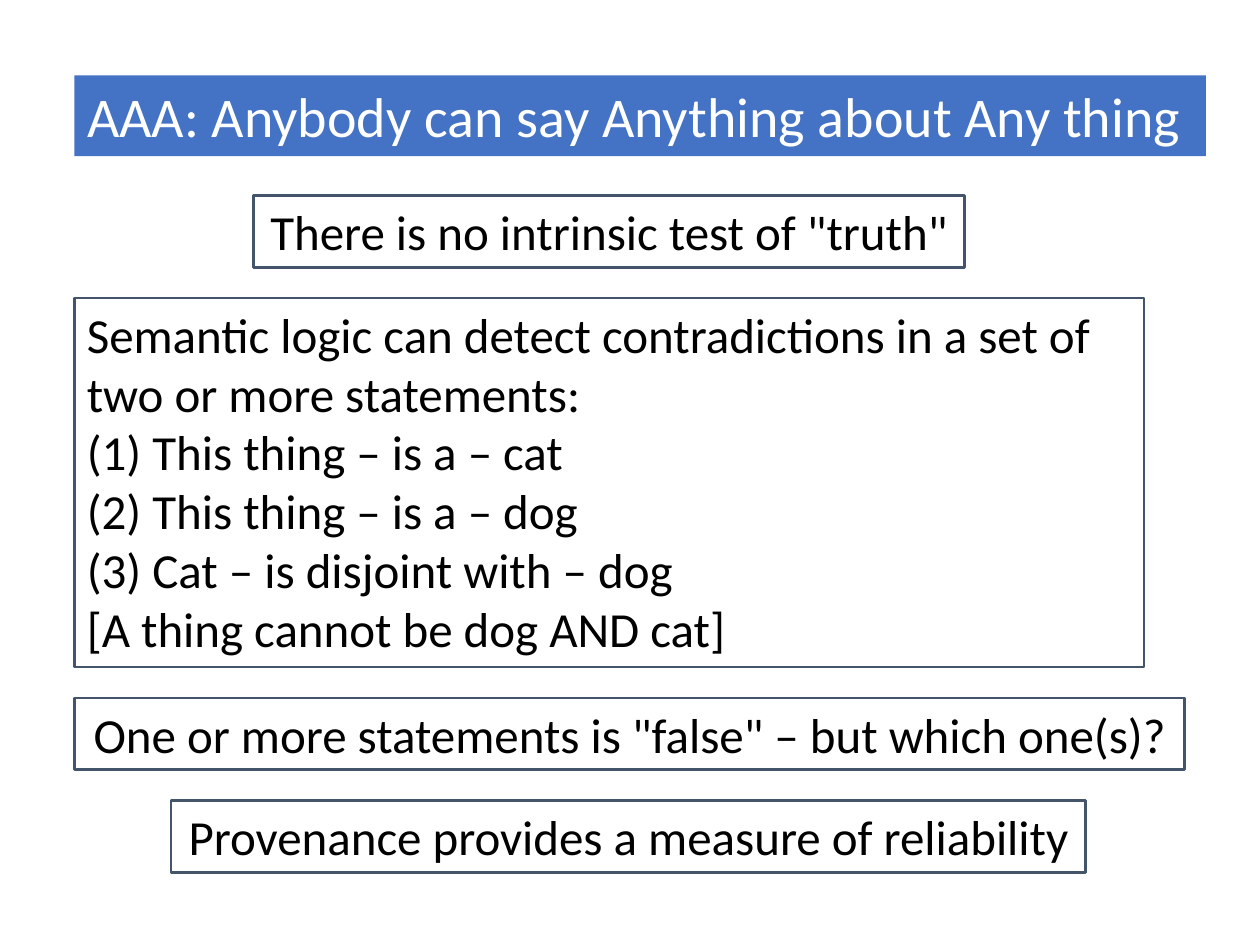
from dataclasses import dataclass

from pptx import Presentation as Deck
from pptx.dml.color import RGBColor as Rgb
from pptx.enum.text import MSO_ANCHOR as Anchor, MSO_AUTO_SIZE as Fit, PP_ALIGN as Align
from pptx.util import Cm, Pt


@dataclass(frozen=True)
class Theme:
    font: str = "Calibri"
    head: Pt = Pt(32)
    body: Pt = Pt(28)
    edge: Pt = Pt(1.5)
    blue: Rgb = Rgb(0x44, 0x72, 0xC4)
    slate: Rgb = Rgb(0x44, 0x54, 0x6A)
    white: Rgb = Rgb(255, 255, 255)
    black: Rgb = Rgb(0, 0, 0)


@dataclass(frozen=True)
class Box:
    left: float
    width: float
    height: float
    text: str
    align: Align = Align.CENTER


THEME = Theme()
LEFT = 1.5
ROW = 1.45
GAP = 0.62
TOP = 3.94

TITLE = "AAA: Anybody can say Anything about Any thing"
LOGIC = "\n".join([
    "Semantic logic can detect contradictions in a set of two or more statements:",
    "(1) This thing – is a – cat",
    "(2) This thing – is a – dog",
    "(3) Cat – is disjoint with – dog",
    "[A thing cannot be dog AND cat]",
])
BOXES = [
    Box(5.11, 14.33, ROW, 'There is no intrinsic test of "truth"'),
    Box(LEFT, 21.56, 7.44, LOGIC, Align.LEFT),
    Box(LEFT, 22.38, ROW, 'One or more statements is "false" – but which one(s)?'),
    Box(3.45, 18.44, ROW, "Provenance provides a measure of reliability"),
]


def write(shape, text: str, size: Pt, color: Rgb, align: Align) -> None:
    frame = shape.text_frame
    frame.text = text
    frame.word_wrap = True
    frame.auto_size = Fit.NONE
    frame.vertical_anchor = Anchor.TOP
    for para in frame.paragraphs:
        para.alignment = align
        for run in para.runs:
            run.font.name = THEME.font
            run.font.size = size
            run.font.color.rgb = color


def draw_title(slide) -> None:
    title = slide.shapes.title
    title.left, title.top = Cm(LEFT), Cm(1.52)
    title.width, title.height = Cm(22.81), Cm(1.63)
    title.fill.solid()
    title.fill.fore_color.rgb = THEME.blue
    write(title, TITLE, THEME.head, THEME.white, Align.LEFT)


def draw_box(slide, box: Box, top: float) -> None:
    shape = slide.shapes.add_textbox(Cm(box.left), Cm(top), Cm(box.width), Cm(box.height))
    shape.line.color.rgb = THEME.slate
    shape.line.width = THEME.edge
    write(shape, box.text, THEME.body, THEME.black, box.align)


def main() -> None:
    deck = Deck()
    deck.slide_width, deck.slide_height = Cm(25.4), Cm(19.05)
    slide = deck.slides.add_slide(deck.slide_layouts[5])

    # Title band
    draw_title(slide)

    # Outlined statements, stacked with equal gaps
    top = TOP
    for box in BOXES:
        draw_box(slide, box, top)
        top += box.height + GAP

    deck.save("out.pptx")


if __name__ == "__main__":
    main()
